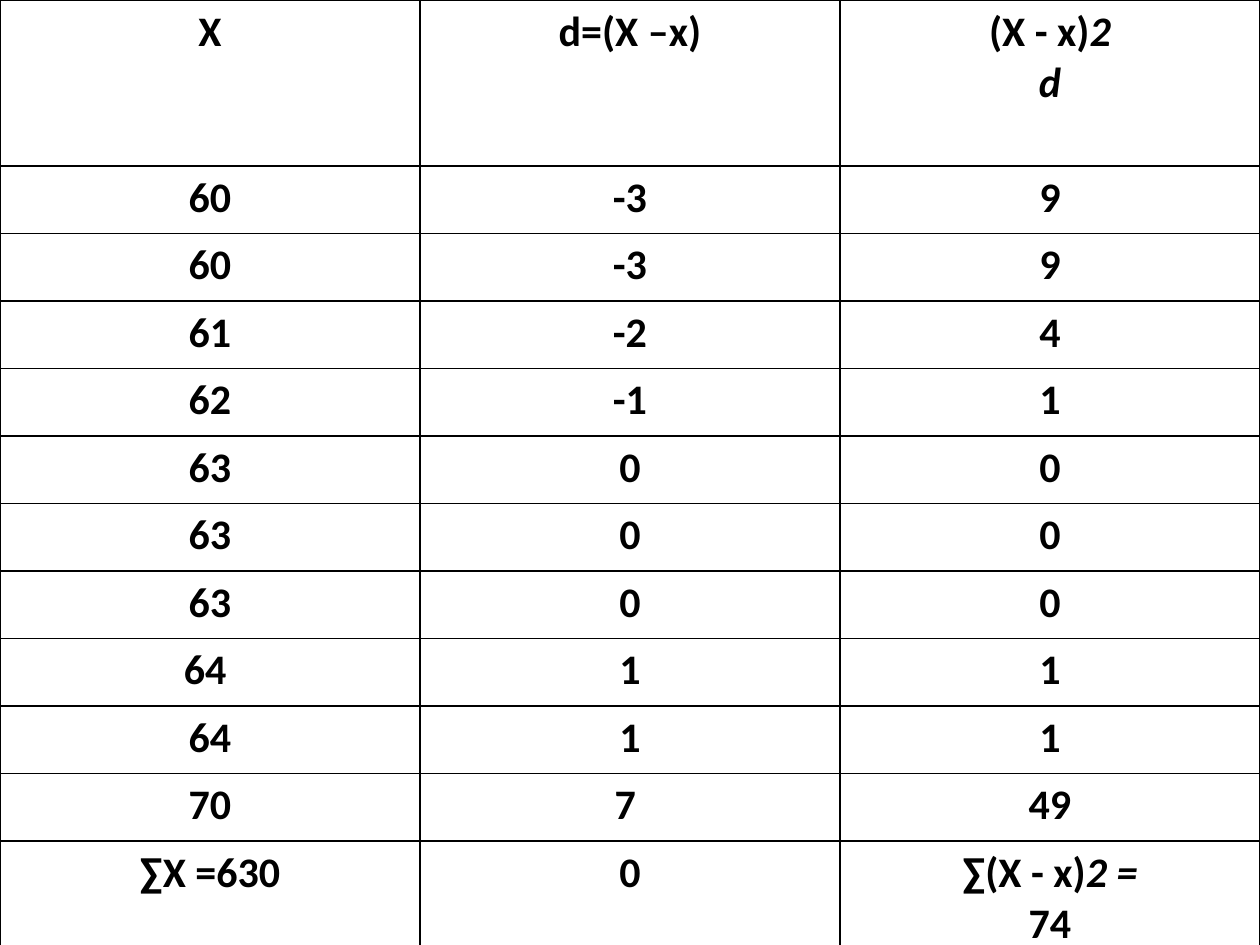
from lxml.etree import SubElement
from pptx import Presentation
from pptx.dml.color import RGBColor
from pptx.enum.text import PP_ALIGN
from pptx.oxml.ns import qn
from pptx.util import Cm, Pt

BLACK = RGBColor(0, 0, 0)

HEADER = ["X", "d=(X –x)", [[("(X - x)", False), ("2", True)], [("d", True)]]]
SCORES = [
    ("60", "-3", "9"),
    ("60", "-3", "9"),
    ("61", "-2", "4"),
    ("62", "-1", "1"),
    ("63", "0", "0"),
    ("63", "0", "0"),
    ("63", "0", "0"),
    ("64 ", "1", "1"),
    ("64", "1", "1"),
    ("70", "7 ", "49"),
]
TOTALS = ["∑X =630", "0", [[("∑(X - x)", False), ("2 =", True)], [("74", False)]]]


class SlideBuilder:
    font = "Calibri"
    size = Pt(24)
    color = BLACK
    border = Pt(1)

    def __init__(self, s):
        self.s = s

    def table(self, rows, left, top, width, header_height, row_height):
        height = header_height + row_height * (len(rows) - 1)
        frame = self.s.shapes.add_table(len(rows), len(rows[0]), left, top, width, height)
        table = frame.table
        table.first_row = False
        table.horz_banding = False
        for i, values in enumerate(rows):
            table.rows[i].height = row_height if i else header_height
            for j, value in enumerate(values):
                self.cell(table.cell(i, j), value)

    def cell(self, cell, value):
        paragraphs = [[(value, False)]] if isinstance(value, str) else value
        tf = cell.text_frame
        for i, runs in enumerate(paragraphs):
            p = tf.add_paragraph() if i else tf.paragraphs[0]
            p.alignment = PP_ALIGN.CENTER
            for text, italic in runs:
                self.run(p, text, italic)
        self.borders(cell)
        cell.fill.background()

    def run(self, p, text, italic):
        r = p.add_run()
        r.text = text
        r.font.name = self.font
        r.font.size = self.size
        r.font.bold = True
        r.font.italic = italic
        r.font.color.rgb = self.color

    def borders(self, cell):
        props = cell._tc.get_or_add_tcPr()
        for side in ("lnL", "lnR", "lnT", "lnB"):
            line = SubElement(props, qn(f"a:{side}"), w=str(int(self.border)))
            fill = SubElement(line, qn("a:solidFill"))
            SubElement(fill, qn("a:srgbClr"), val=str(self.color))


def main():
    prs = Presentation()
    prs.slide_width = Cm(25.4)
    prs.slide_height = Cm(19.05)
    s = prs.slides.add_slide(prs.slide_layouts[6])
    SlideBuilder(s).table(
        [HEADER, *SCORES, TOTALS], Cm(0), Cm(0), prs.slide_width, Cm(3.35), Cm(1.36)
    )
    prs.save("out.pptx")


if __name__ == "__main__":
    main()
